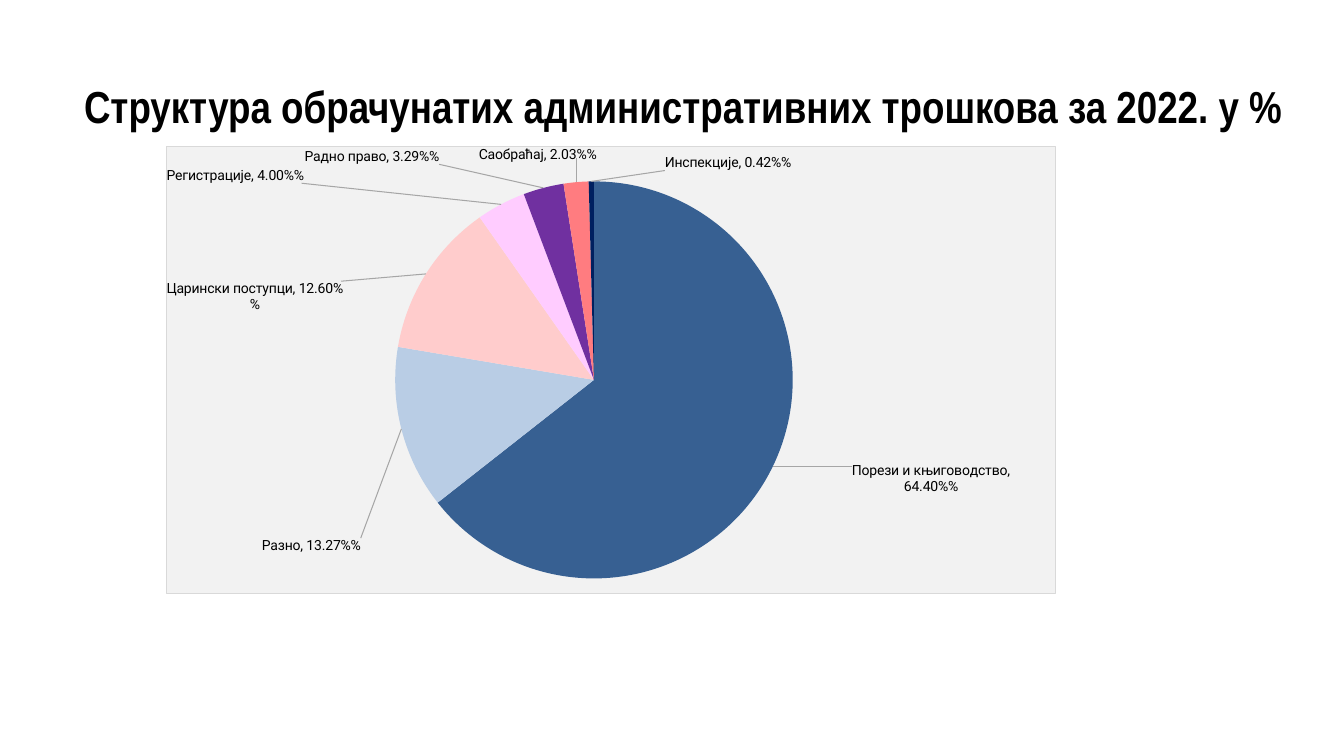
from lxml.etree import SubElement
from pptx import Presentation
from pptx.chart.data import CategoryChartData
from pptx.dml.color import RGBColor
from pptx.enum.chart import XL_CHART_TYPE, XL_LABEL_POSITION
from pptx.enum.text import MSO_ANCHOR, PP_ALIGN
from pptx.oxml import parse_xml
from pptx.oxml.ns import nsdecls, qn
from pptx.util import Pt

EMU_PER_PX = 914400 / 100.8
COLORS = {
    "text": "000000", "area": "F2F2F2", "border": "D9D9D9", "leader": "A6A6A6",
    "taxes": "376092", "other": "B9CDE5", "customs": "FFCCCC", "registration": "FFCCFF",
    "labour": "7030A0", "traffic": "FF7C80", "inspection": "002060",
}
TITLE = "Структура обрачунатих административних трошкова за 2022. у %"
TITLE_BOX = (84, 73, 1203, 73)
CHART_BOX = (166, 146, 890, 448)
PIE_BOX = (229, 35, 398, 398)
SLICES = [
    ("Порези и књиговодство", 0.644, "taxes", (74, -6)),
    ("Разно", 0.1327, "other", (-35, 108)),
    ("Царински поступци", 0.126, "customs", (-80, 42)),
    ("Регистрације", 0.04, "registration", (-197, -16)),
    ("Радно право", 0.0329, "labour", (-103, -18)),
    ("Саобраћај", 0.0203, "traffic", (21, -18)),
    ("Инспекције", 0.0042, "inspection", (137, -5)),
]


def px(length):
    """Turn pixels into EMU."""
    return round(length * EMU_PER_PX)


def write(frame, text, font, size, bold=False, color="text", align=PP_ALIGN.LEFT):
    """Put one formatted paragraph into a text frame."""
    para = frame.paragraphs[0]
    para.alignment = align
    span = para.add_run()
    span.text = text
    span.font.name = font
    span.font.size = Pt(size)
    span.font.bold = bold
    span.font.color.rgb = RGBColor.from_string(COLORS[color])


def manual_layout(**settings):
    """Build a chart layout element from its settings."""
    layout = parse_xml(f"<c:layout {nsdecls('c')}><c:manualLayout/></c:layout>")
    for name, value in settings.items():
        SubElement(layout[0], qn(f"c:{name}")).set("val", str(value))
    return layout


def line_properties(color, fill=""):
    """Build shape properties with a thin line and an optional fill."""
    solid = '<a:solidFill><a:srgbClr val="{}"/></a:solidFill>'
    area = solid.format(COLORS[fill]) if fill else ""
    return parse_xml(
        f"<c:spPr {nsdecls('c', 'a')}>{area}"
        f'<a:ln w="9525">{solid.format(COLORS[color])}</a:ln></c:spPr>'
    )


def add_title(page, box):
    """Place the slide title in the title placeholder."""
    title = page.shapes.title
    title.left, title.top, title.width, title.height = map(px, box)
    frame = title.text_frame
    frame.margin_left = frame.margin_top = frame.margin_right = frame.margin_bottom = 0
    frame.vertical_anchor = MSO_ANCHOR.MIDDLE
    frame.word_wrap = True
    write(frame, TITLE, "Arial Narrow", 32, bold=True)
    frame.paragraphs[0].line_spacing = 0.9


def label_slices(series, chart, width, height):
    """Colour each slice and place its label beside the pie."""
    labels = series.data_labels
    labels.number_format = "0.00%"
    labels.number_format_is_linked = False
    labels.show_value = labels.show_category_name = labels.show_percentage = True
    labels.position = XL_LABEL_POSITION.OUTSIDE_END
    for index, (name, value, color, offset) in enumerate(SLICES):
        point = series.points[index]
        point.format.fill.solid()
        point.format.fill.fore_color.rgb = RGBColor.from_string(COLORS[color])
        label = point.data_label
        write(label.text_frame, f"{name}, {value:.2%}%", "Roboto", 10, align=PP_ALIGN.CENTER)
        label.position = XL_LABEL_POSITION.OUTSIDE_END
        element = chart.element.xpath(f".//c:dLbl[c:idx/@val='{index}']")[0]
        element.find(qn("c:idx")).addnext(
            manual_layout(x=round(offset[0] / width, 4), y=round(offset[1] / height, 4))
        )
    group = chart.element.xpath(".//c:ser/c:dLbls")[0]
    leader_switch = group.find(qn("c:showLeaderLines"))
    if leader_switch is None:
        leader_switch = SubElement(group, qn("c:showLeaderLines"))
    leader_switch.set("val", "1")
    SubElement(group, qn("c:leaderLines")).append(line_properties("leader"))


def add_cost_chart(page, box):
    """Place the pie chart of administrative costs."""
    width, height = box[2:]
    data = CategoryChartData(number_format="0.00%")
    data.categories = [name for name, *_ in SLICES]
    data.add_series("Series 1", [value for _, value, *_ in SLICES])
    chart = page.shapes.add_chart(XL_CHART_TYPE.PIE, *map(px, box), data).chart
    chart.has_title = chart.has_legend = False
    chart.font.name = "Roboto"
    chart.font.size = Pt(10)
    chart.font.color.rgb = RGBColor.from_string(COLORS["text"])
    chart.plots[0].vary_by_categories = True
    label_slices(chart.plots[0].series[0], chart, width, height)
    plot_area = chart.element.xpath(".//c:plotArea")[0]
    for layout in plot_area.findall(qn("c:layout")):
        plot_area.remove(layout)
    left, top, pie_width, pie_height = PIE_BOX
    plot_area.insert(0, manual_layout(
        layoutTarget="inner", xMode="edge", yMode="edge",
        x=round(left / width, 4), y=round(top / height, 4),
        w=round(pie_width / width, 4), h=round(pie_height / height, 4),
    ))
    chart.element.find(qn("c:chart")).addnext(line_properties("border", fill="area"))


def main():
    """Build the deck and save it."""
    deck = Presentation()
    deck.slide_width, deck.slide_height = px(1344), px(756)
    page = deck.slides.add_slide(deck.slide_layouts[5])
    add_title(page, TITLE_BOX)
    add_cost_chart(page, CHART_BOX)
    deck.save("out.pptx")


if __name__ == "__main__":
    main()
